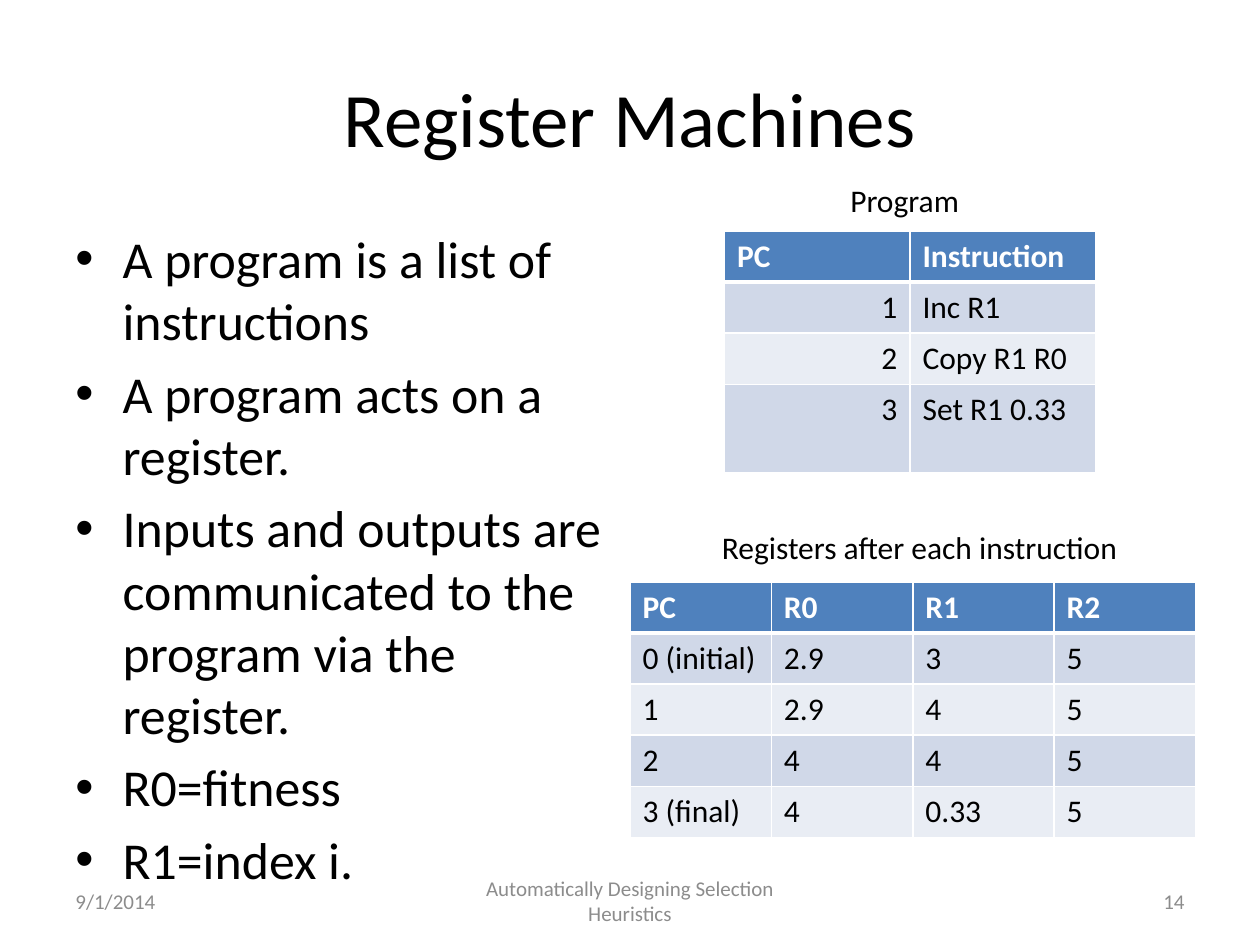
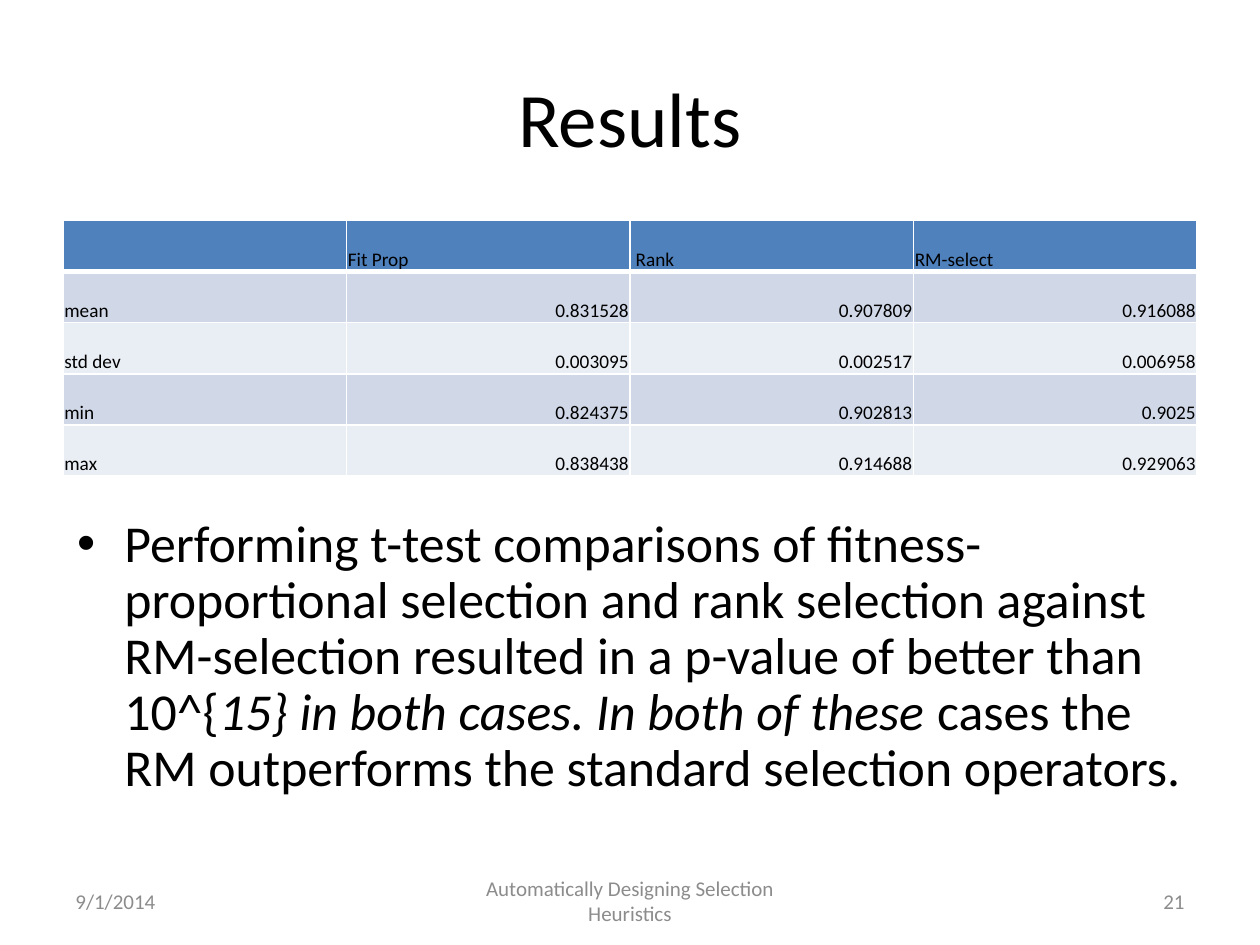
from dataclasses import dataclass

from lxml.etree import SubElement
from pptx import Presentation
from pptx.dml.color import RGBColor
from pptx.enum.text import MSO_ANCHOR, MSO_AUTO_SIZE, PP_ALIGN
from pptx.oxml.ns import qn
from pptx.util import Pt


@dataclass(frozen=True)
class Theme:
    """Colours, font and type sizes shared by the slides."""
    font: str = "Calibri"
    ink: str = "000000"
    muted: str = "8C8C8C"
    paper: str = "FFFFFF"
    header: str = "4F81BD"
    bands: tuple = ("D0D8E8", "E9EDF4")
    title_size: float = 44
    body_size: float = 29.6
    label_size: float = 18
    small_size: float = 11
    footer_size: float = 12
    bullet_indent: float = 27
    rule: float = 1
    header_rule: float = 3


THEME = Theme()
FOOTER_TEXT = "Automatically Designing Selection Heuristics"
DATE = "9/1/2014"
ROW_HEIGHT = 29.2


def style(paragraph, size, color=THEME.ink, align=PP_ALIGN.LEFT, bold=False):
    """Set the font and alignment of a whole paragraph."""
    paragraph.alignment = align
    font = paragraph.font
    font.name, font.size, font.bold = THEME.font, Pt(size), bold
    font.color.rgb = RGBColor.from_string(color)


def add_text_frame(slide, box, anchor=MSO_ANCHOR.TOP):
    """Add a wrapping text box and return its text frame."""
    frame = slide.shapes.add_textbox(*map(Pt, box)).text_frame
    frame.word_wrap = True
    frame.vertical_anchor = anchor
    return frame


def add_line(slide, text, box, size, color=THEME.ink, align=PP_ALIGN.CENTER):
    """Add one vertically centred paragraph."""
    paragraph = add_text_frame(slide, box, MSO_ANCHOR.MIDDLE).paragraphs[0]
    paragraph.text = text
    style(paragraph, size, color, align)


def add_caption(slide, text, box):
    """Add an unwrapped caption above a table."""
    frame = add_text_frame(slide, box)
    frame.word_wrap = False
    frame.auto_size = MSO_AUTO_SIZE.SHAPE_TO_FIT_TEXT
    frame.text = text
    style(frame.paragraphs[0], THEME.label_size)


def add_bullets(slide, items, box, line_spacing=1.0):
    """Add bullets, each given as a list of (text, italic) pieces."""
    frame = add_text_frame(slide, box)
    for index, pieces in enumerate(items):
        paragraph = frame.add_paragraph() if index else frame.paragraphs[0]
        properties = paragraph._p.get_or_add_pPr()
        properties.set("marL", str(Pt(THEME.bullet_indent)))
        properties.set("indent", str(-Pt(THEME.bullet_indent)))
        SubElement(properties, qn("a:buFont"), typeface="Arial")
        SubElement(properties, qn("a:buChar"), char="•")
        paragraph.line_spacing = line_spacing
        paragraph.space_before = Pt(0.2 * THEME.body_size)
        style(paragraph, THEME.body_size)
        for text, italic in pieces:
            run = paragraph.add_run()
            run.text = text
            if italic:
                run.font.italic = True


def add_borders(cell, row):
    """Rule a cell in white, with a thicker rule under the header row."""
    heavy = {0: "lnB", 1: "lnT"}.get(row)
    for side in ("lnL", "lnR", "lnT", "lnB"):
        width = THEME.header_rule if side == heavy else THEME.rule
        line = SubElement(cell._tc.get_or_add_tcPr(), qn(f"a:{side}"), w=str(Pt(width)))
        fill = SubElement(line, qn("a:solidFill"))
        SubElement(fill, qn("a:srgbClr"), val=THEME.paper)


def add_grid(slide, rows, left, top, width, right_columns=(), last_height=ROW_HEIGHT, compact=False):
    """Add a banded table; compact means small text resting on the cell floor."""
    columns = len(rows[0])
    height = ROW_HEIGHT * (len(rows) - 1) + last_height
    table = slide.shapes.add_table(len(rows), columns, *map(Pt, (left, top, width, height))).table
    table.first_row = table.horz_banding = False
    for column in table.columns:
        column.width = Pt(width / columns)
    for row in table.rows:
        row.height = Pt(ROW_HEIGHT)
    table.rows[len(rows) - 1].height = Pt(last_height)
    for r, values in enumerate(rows):
        for c, value in enumerate(values):
            cell = table.cell(r, c)
            add_borders(cell, r)
            cell.fill.solid()
            cell.fill.fore_color.rgb = RGBColor.from_string(THEME.bands[(r - 1) % 2] if r else THEME.header)
            cell.text = value
            if compact:
                cell.vertical_anchor = MSO_ANCHOR.BOTTOM
                cell.margin_left = cell.margin_right = cell.margin_top = Pt(0.75)
                cell.margin_bottom = 0
            strong = r == 0 and not compact
            style(
                cell.text_frame.paragraphs[0],
                THEME.small_size if compact else THEME.label_size,
                THEME.paper if strong else THEME.ink,
                PP_ALIGN.RIGHT if r and c in right_columns else PP_ALIGN.LEFT,
                strong,
            )


def add_slide(deck, title, number):
    """Add a blank slide with the shared title and footers."""
    slide = deck.slides.add_slide(deck.slide_layouts[6])
    add_line(slide, title, (36, 21.6, 648, 90), THEME.title_size)
    for text, left, width, align in (
        (DATE, 36, 168, PP_ALIGN.LEFT),
        (FOOTER_TEXT, 246, 228, PP_ALIGN.CENTER),
        (str(number), 516, 168, PP_ALIGN.RIGHT),
    ):
        add_line(slide, text, (left, 500.5, width, 28.75), THEME.footer_size, THEME.muted, align)
    return slide


def build_register_machines(deck):
    """Build the slide that explains register machines."""
    slide = add_slide(deck, "Register Machines", 14)
    points = (
        "A program is a list of instructions",
        "A program acts on a register.",
        "Inputs and outputs are communicated to the program via the register.",
        "R0=fitness",
        "R1=index i.",
    )
    add_bullets(slide, [[(point, False)] for point in points], (36, 126, 324, 356.4))
    registers = (
        ("PC", "R0", "R1", "R2"),
        ("0 (initial)", "2.9", "3", "5"),
        ("1", "2.9", "4", "5"),
        ("2", "4", "4", "5"),
        ("3 (final)", "4", "0.33", "5"),
    )
    add_grid(slide, registers, 360, 332.5, 323.2)
    program = (
        ("PC", "Instruction"),
        ("1", "Inc R1"),
        ("2", "Copy R1 R0"),
        ("3", "Set R1 0.33"),
    )
    add_grid(slide, program, 414, 132, 212, right_columns=(0,), last_height=50.6)
    add_caption(slide, "Program", (478.8, 100.1, 77, 29))
    add_caption(slide, "Registers after each instruction", (405.4, 298.1, 243.4, 29))


def build_results(deck):
    """Build the slide that compares the selection operators."""
    slide = add_slide(deck, "Results", 21)
    results = (
        ("", "Fit Prop", " Rank", "RM-select"),
        ("mean", "0.831528", "0.907809", "0.916088"),
        ("std dev", "0.003095", "0.002517", "0.006958"),
        ("min", "0.824375", "0.902813", "0.9025"),
        ("max", "0.838438", "0.914688", "0.929063"),
    )
    add_grid(slide, results, 36, 126, 648, right_columns=(1, 2, 3), compact=True)
    conclusion = [
        ("Performing t-test comparisons of fitness-proportional selection and rank selection "
         "against RM-selection resulted in a p-value of better than 10^{", False),
        ("15} in both cases. In both of these ", True),
        ("cases the RM outperforms the standard selection operators.", False),
    ]
    add_bullets(slide, [conclusion], (37, 292.3, 648, 206.6), line_spacing=0.9)


def main():
    """Build and save the deck."""
    deck = Presentation()
    deck.slide_width, deck.slide_height = Pt(720), Pt(540)
    build_register_machines(deck)
    build_results(deck)
    deck.save("out.pptx")


if __name__ == "__main__":
    main()
